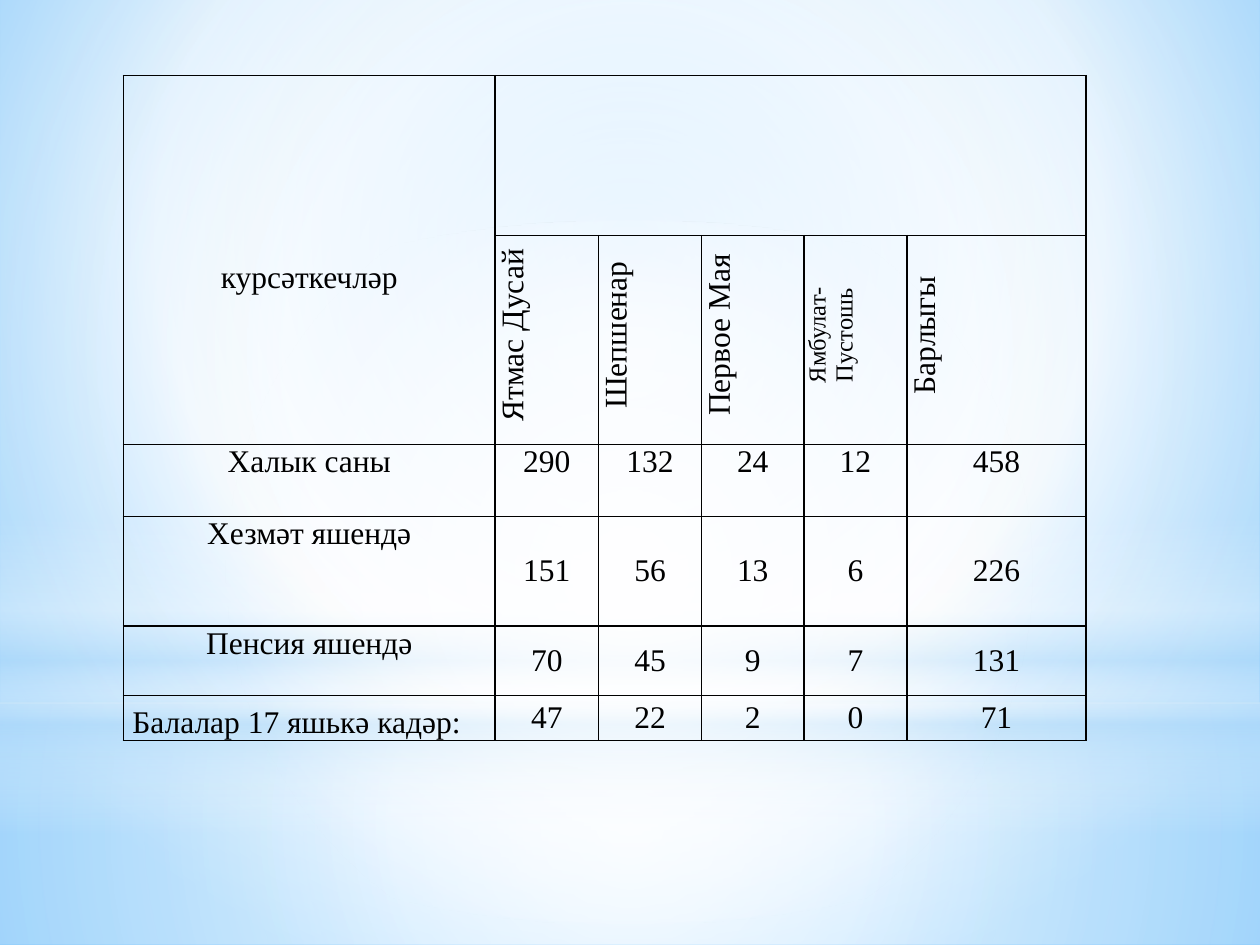
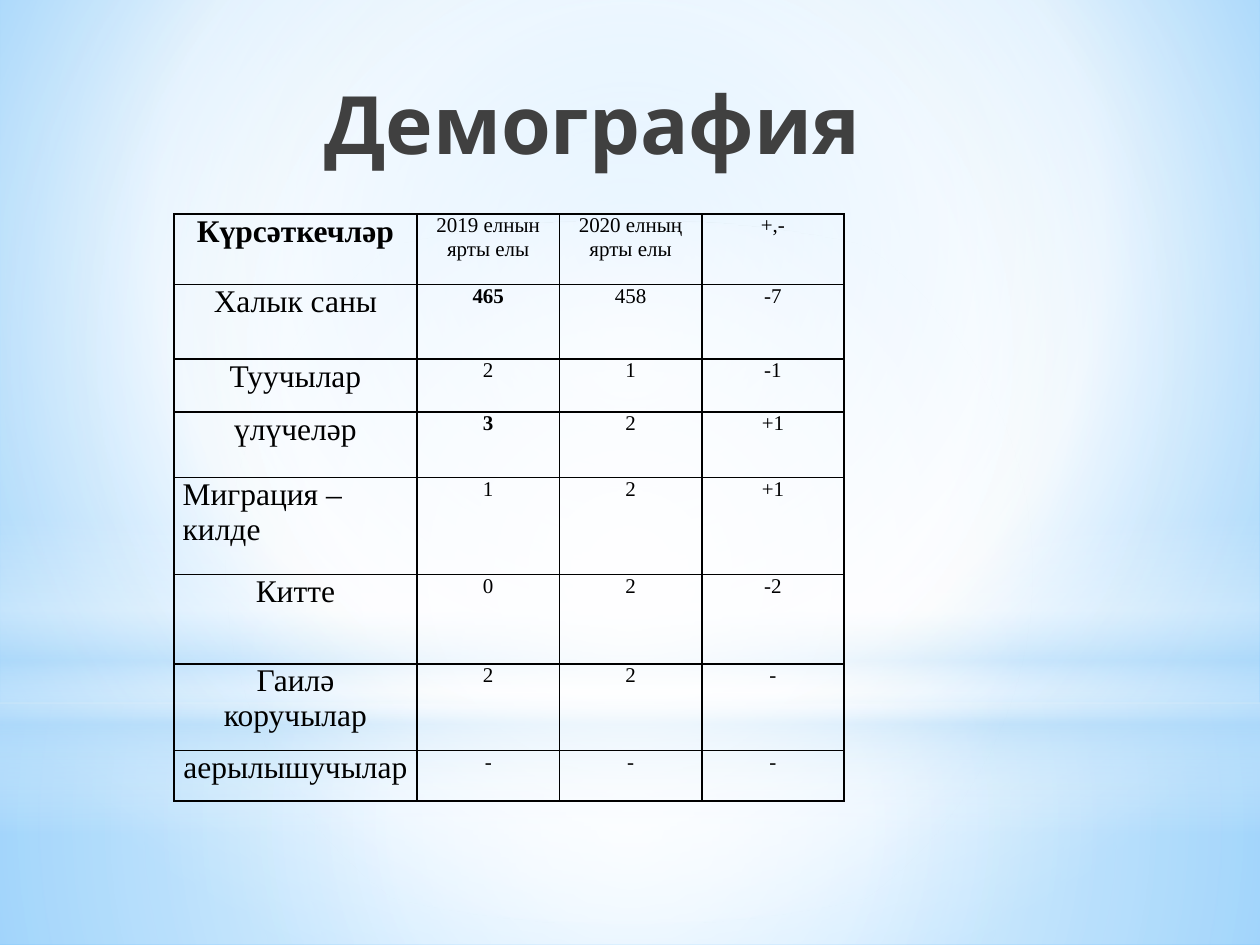
from dataclasses import dataclass

from lxml.etree import SubElement
from pptx import Presentation
from pptx.dml.color import RGBColor
from pptx.enum.shapes import MSO_SHAPE
from pptx.enum.text import MSO_ANCHOR, PP_ALIGN
from pptx.oxml.ns import qn
from pptx.util import Inches, Pt


@dataclass(frozen=True)
class Theme:
    """Colours, fonts and type sizes of the deck."""
    ink: str = "000000"
    title: str = "404040"
    white: str = "FFFFFF"
    haze: str = "B4DCFA"
    sky: str = "9ED5FF"
    deep: str = "5BB9FF"
    serif: str = "Times New Roman"
    sans: str = "Cabin"
    big: int = 46
    body: int = 18
    mid: int = 14
    small: int = 12


T = Theme()
CENTRE = (50, 50, 50, 50)
BANDS = [
    (MSO_SHAPE.RECTANGLE, (0, 5.58, 10, 1.92),
     [(0, T.white, 91), (37, T.white, 76), (100, T.haze, 79)], CENTRE),
    (MSO_SHAPE.RECTANGLE, (0, 0, 10, 5.58),
     [(0, T.white, 89), (48, T.white, 62), (100, T.haze, 79)], CENTRE),
    (MSO_SHAPE.RECTANGLE, (0, 4.12, 10, 2.5),
     [(0, T.white, 0), (29, T.white, 30), (45, T.haze, 40),
      (55, T.white, 26), (65, T.haze, 60), (100, T.white, 0)], None),
    (MSO_SHAPE.OVAL, (0, 1.75, 10, 5.58),
     [(0, T.white, 100), (56, T.white, 0)], CENTRE),
]
VILLAGE = [
    ["курсәткечләр", "", "", "", "", ""],
    ["", "Ятмас Дусай", "Шепшенар", "Первое Мая", "Ямбулат-Пустошь", "Барлыгы"],
    ["Халык саны", "290", "132", "24", "12", "458"],
    ["Хезмәт яшендә", "151", "56", "13", "6", "226"],
    ["Пенсия яшендә", "70", "45", "9", "7", "131"],
    ["Балалар 17 яшькә кадәр:", "47", "22", "2", "0", "71"],
]
CHANGE = [
    ["Күрсәткечләр", "2019 елнын\nярты елы", "2020 елның ярты елы", "+,-"],
    ["Халык саны", "465", "458", "-7"],
    ["Туучылар", "2", "1", "-1"],
    ["үлүчеләр", "3", "2", "+1"],
    ["Миграция – килде", "1", "2", "+1"],
    ["Китте", "0", "2", "-2"],
    ["Гаилә коручылар", "2", "2", "-"],
    ["аерылышучылар", "-", "-", "-"],
]


def blend(holder, stops, focus):
    """Swap the solid fill of holder for a gradient."""
    old = holder.find(qn("a:solidFill"))
    grad = old.makeelement(qn("a:gradFill"), {"rotWithShape": "1"})
    holder.replace(old, grad)
    row = SubElement(grad, qn("a:gsLst"))
    for pos, tint, alpha in stops:
        stop = SubElement(row, qn("a:gs"), pos=str(pos * 1000))
        clr = SubElement(stop, qn("a:srgbClr"), val=tint)
        if alpha < 100:
            SubElement(clr, qn("a:alpha"), val=str(alpha * 1000))
    if focus:
        ring = SubElement(grad, qn("a:path"), {"path": "circle"})
        sides = {k: str(v * 1000) for k, v in zip("ltrb", focus)}
        SubElement(ring, qn("a:fillToRect"), sides)
    else:
        SubElement(grad, qn("a:lin"), ang="5400000", scaled="0")


def backdrop(slide):
    """Paint the sky and its four soft bands."""
    fill = slide.background.fill
    fill.solid()
    fill.fore_color.rgb = RGBColor.from_string(T.white)
    holder = next(slide.element.iter(qn("p:bgPr")))
    stops = [(0, T.sky, 100), (60, T.white, 100), (100, T.deep, 100)]
    blend(holder, stops, (20, 10, 20, 60))
    for kind, box, stops, focus in BANDS:
        band = slide.shapes.add_shape(kind, *map(Inches, box))
        band.shadow.inherit = False
        band.line.fill.background()
        band.fill.solid()
        blend(band.element.spPr, stops, focus)


def style(para, size, face=T.serif, tint=T.ink, bold=False):
    """Set the font of a centred paragraph."""
    para.alignment = PP_ALIGN.CENTER
    font = para.font
    font.name, font.size, font.bold = face, Pt(size), bold
    font.color.rgb = RGBColor.from_string(tint)


def frame(cell):
    """Give a cell thin black borders and no fill."""
    props = cell._tc.get_or_add_tcPr()
    for side in ("lnL", "lnR", "lnT", "lnB"):
        line = SubElement(props, qn("a:" + side), w=str(Pt(1)))
        paint = SubElement(line, qn("a:solidFill"))
        SubElement(paint, qn("a:srgbClr"), val=T.ink)
    cell.fill.background()


def grid(slide, left, top, cols, rows, data, size):
    """Add a ruled table; size gives the type size of each cell."""
    box = map(Inches, (left, top, sum(cols), sum(rows)))
    table = slide.shapes.add_table(len(rows), len(cols), *box).table
    table.first_row = table.horz_banding = False
    for col, width in zip(table.columns, cols):
        col.width = Inches(width)
    for r, (row, height) in enumerate(zip(table.rows, rows)):
        row.height = Inches(height)
        for c, cell in enumerate(row.cells):
            cell.margin_left = cell.margin_right = Inches(0.07)
            cell.margin_top = cell.margin_bottom = 0
            cell.text = data[r][c]
            for para in cell.text_frame.paragraphs:
                style(para, size(r, c))
            frame(cell)
    return table


def village(slide):
    """Build the table of people by village."""
    cols = [2.95, 0.82, 0.82, 0.81, 0.82, 1.42]
    rows = [1.27, 1.66, 0.57, 0.87, 0.55, 0.36]
    table = grid(slide, 0.98, 0.6, cols, rows, VILLAGE,
                 lambda r, c: T.mid if (r, c) == (1, 4) else T.body)
    head = table.cell(0, 0)
    head.merge(table.cell(1, 0))
    head.vertical_anchor = MSO_ANCHOR.MIDDLE
    head.margin_top = Inches(0.28)
    table.cell(0, 1).merge(table.cell(0, 5))
    for c in range(1, 6):
        name = table.cell(1, c)
        name._tc.get_or_add_tcPr().set("vert", "vert270")
        para = name.text_frame.paragraphs[0]
        para._p.get_or_add_pPr().set("marL", str(Inches(0.08)))
        for r in range(3, 6):
            table.cell(r, c).vertical_anchor = MSO_ANCHOR.MIDDLE
    last = table.cell(5, 0)
    last.vertical_anchor = MSO_ANCHOR.BOTTOM
    last.text_frame.paragraphs[0].alignment = PP_ALIGN.LEFT


def heading(slide, text, box):
    """Place a slide title in box."""
    area = slide.shapes.add_textbox(*map(Inches, box)).text_frame
    area.word_wrap = True
    area.margin_top = area.margin_bottom = 0
    area.text = text
    style(area.paragraphs[0], T.big, T.sans, T.title, True)


def change(slide):
    """Build the title and the half-year table."""
    heading(slide, "Демография", (1.96, 0.59, 5.48, 0.72))
    cols = [1.93] + [1.13] * 3
    rows = [0.56, 0.59, 0.42, 0.52, 0.77, 0.71, 0.69, 0.4]
    table = grid(slide, 1.38, 1.7, cols, rows, CHANGE,
                 lambda r, c: T.small if c else T.body)
    for spot in ((0, 0), (1, 1), (3, 1)):
        table.cell(*spot).text_frame.paragraphs[0].font.bold = True
    table.cell(4, 0).text_frame.paragraphs[0].alignment = PP_ALIGN.LEFT


def main():
    """Make the deck and save it."""
    deck = Presentation()
    deck.slide_width, deck.slide_height = Inches(10), Inches(7.5)
    for build in (village, change):
        slide = deck.slides.add_slide(deck.slide_layouts[6])
        backdrop(slide)
        build(slide)
    deck.save("out.pptx")


if __name__ == "__main__":
    main()
